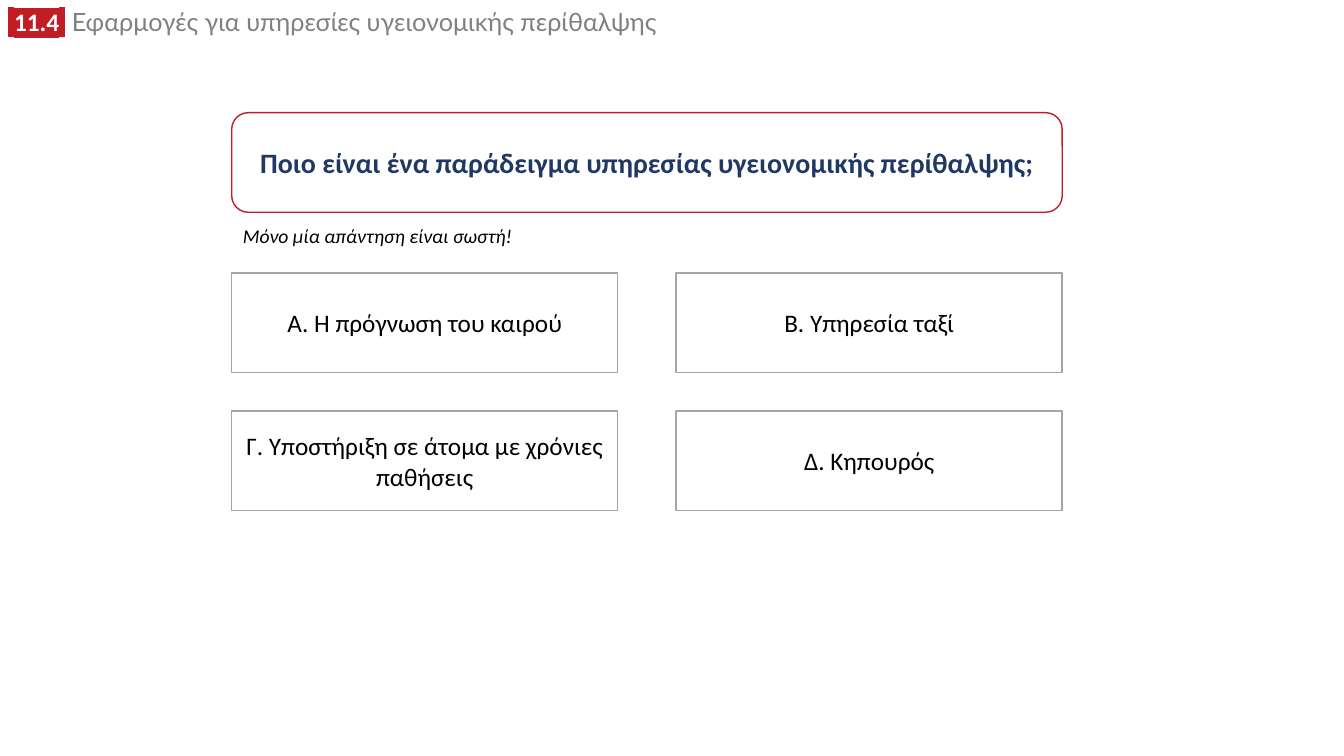
from lxml import etree
from pptx import Presentation
from pptx.dml.color import RGBColor
from pptx.enum.shapes import MSO_SHAPE
from pptx.enum.text import MSO_ANCHOR, MSO_AUTO_SIZE, PP_ALIGN
from pptx.oxml.ns import qn
from pptx.util import Cm, Pt

RECTANGLE = MSO_SHAPE.RECTANGLE
ROUNDED = MSO_SHAPE.ROUNDED_RECTANGLE
TOP, MIDDLE = MSO_ANCHOR.TOP, MSO_ANCHOR.MIDDLE
LEFT, CENTER = PP_ALIGN.LEFT, PP_ALIGN.CENTER
FIT_SHAPE = MSO_AUTO_SIZE.SHAPE_TO_FIT_TEXT

RED, NAVY, GREY, SILVER = "C01E24", "203864", "808080", "A5A5A5"
WHITE, BLACK = "FFFFFF", "000000"
TITLE_ONLY = 5


def style(span, size, color, font="Calibri", bold=False, italic=False):
    span.font.size = Pt(size)
    span.font.name = font
    span.font.bold = bold
    span.font.italic = italic
    span.font.color.rgb = RGBColor.from_string(color)


def add_box(kind, left, top, width, line, text, size, color, bold=False):
    """Add an outlined white box with centred text; lengths in centimetres."""
    box = page.shapes.add_shape(kind, Cm(left), Cm(top), Cm(width), Cm(BOX_HEIGHT))
    box.shadow.inherit = False
    box.fill.solid()
    box.fill.fore_color.rgb = RGBColor.from_string(WHITE)
    box.line.color.rgb = RGBColor.from_string(line)
    box.line.width = Pt(1)
    box.text_frame.word_wrap = True
    box.text_frame.vertical_anchor = MIDDLE
    para = box.text_frame.paragraphs[0]
    para.text = text
    para.alignment = CENTER
    style(para.runs[0], size, color, bold=bold)


deck = Presentation()
deck.slide_width, deck.slide_height = Cm(33.87), Cm(19.05)
page = deck.slides.add_slide(deck.slide_layouts[TITLE_ONLY])

# Title with the highlighted section number
title = page.shapes.title
title.left, title.top, title.width, title.height = Cm(-0.05), Cm(0.18), Cm(24.18), Cm(0.89)
title.text_frame.word_wrap = True
title.text_frame.auto_size = FIT_SHAPE
title.text_frame.vertical_anchor = TOP
para = title.text_frame.paragraphs[0]
para.alignment = LEFT
para.line_spacing = 0.8
for text, font in ((" ", "Lato"), ("11.4", "Calibri"), (" ", "Lato")):
    span = para.add_run()
    span.text = text
    style(span, 18, WHITE, font, bold=True)
    highlight = etree.Element(qn("a:highlight"))
    etree.SubElement(highlight, qn("a:srgbClr"), val=RED)
    span.font._element.find(qn("a:solidFill")).addnext(highlight)
span = para.add_run()
span.text = " Εφαρμογές για υπηρεσίες υγειονομικής περίθαλψης"
style(span, 18, GREY, "Lato")

# Question
BOX_LEFT, BOX_HEIGHT = 5.84, 2.51
add_box(ROUNDED, BOX_LEFT, 2.84, 20.93, RED,
        "Ποιο είναι ένα παράδειγμα υπηρεσίας υγειονομικής περίθαλψης;",
        20, NAVY, bold=True)

hint = page.shapes.add_textbox(Cm(5.87), Cm(5.51), Cm(7.34), Cm(0.86))
hint.text_frame.word_wrap = False
hint.text_frame.auto_size = FIT_SHAPE
hint.text_frame.text = "Μόνο μία απάντηση είναι σωστή!"
style(hint.text_frame.paragraphs[0].runs[0], 14, BLACK, italic=True)

# Answers in a two-by-two grid
answers = (
    "A. Η πρόγνωση του καιρού",
    "B. Υπηρεσία ταξί",
    "Γ. Υποστήριξη σε άτομα με χρόνιες παθήσεις",
    "Δ. Κηπουρός",
)
for index, answer in enumerate(answers):
    row, column = divmod(index, 2)
    add_box(RECTANGLE, BOX_LEFT + 11.2 * column, 6.88 + 3.48 * row, 9.73,
            SILVER, answer, 18, BLACK)

deck.save("out.pptx")
